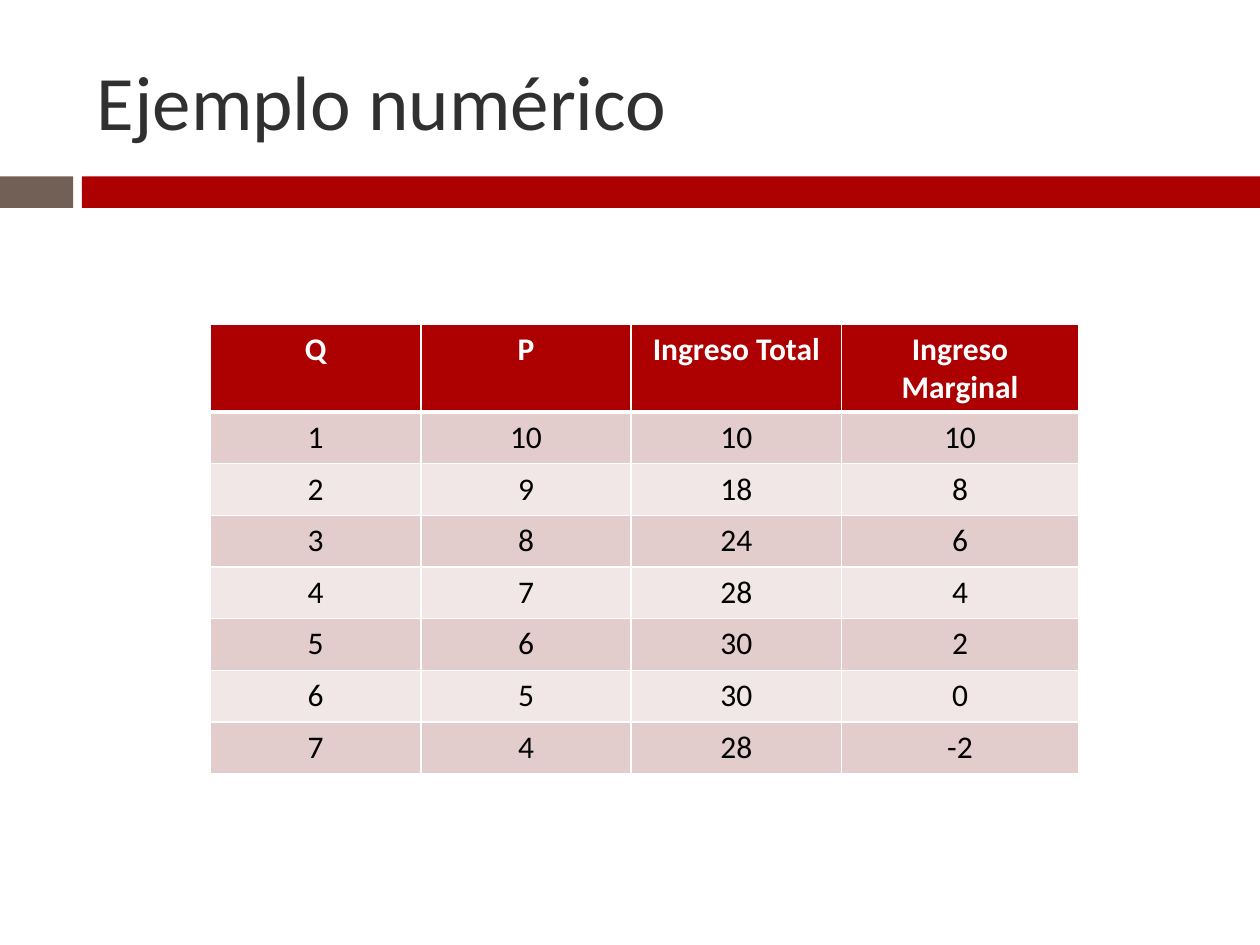
from dataclasses import dataclass

from lxml.etree import SubElement
from pptx import Presentation
from pptx.dml.color import RGBColor
from pptx.enum.shapes import MSO_SHAPE
from pptx.enum.text import MSO_ANCHOR, PP_ALIGN
from pptx.oxml.ns import qn
from pptx.slide import Slide
from pptx.table import _Cell
from pptx.text.text import TextFrame
from pptx.util import Inches, Pt


@dataclass(frozen=True)
class Theme:
    font: str = "Calibri"
    title_size: int = 44
    table_size: int = 18
    title: str = "303030"
    red: str = "AD0101"
    brown: str = "726056"
    white: str = "FFFFFF"
    black: str = "000000"
    bands: tuple[str, str] = ("E3CCCC", "F1E7E7")
    thin: int = 1
    thick: int = 3


@dataclass(frozen=True)
class Bar:
    left: float
    right: float
    color: str


THEME = Theme()
SLIDE_WIDTH, SLIDE_HEIGHT = Inches(10), Inches(7.5)
BAR_TOP, BAR_HEIGHT = Inches(1.4), Inches(0.25)
BARS = [Bar(0, 0.058, THEME.brown), Bar(0.065, 1, THEME.red)]

COLUMN_WIDTHS = [Inches(width) for width in (1.67, 1.67, 1.67, 1.88)]
HEADER_HEIGHT, ROW_HEIGHT = Inches(0.7), Inches(0.41)
HEADERS = ("Q", "P", "Ingreso Total", "Ingreso Marginal")
REVENUES = [
    (1, 10, 10, 10),
    (2, 9, 18, 8),
    (3, 8, 24, 6),
    (4, 7, 28, 4),
    (5, 6, 30, 2),
    (6, 5, 30, 0),
    (7, 4, 28, -2),
]


def write_text(frame: TextFrame, text: str, size: int, color: str,
               bold: bool = False, align: PP_ALIGN = PP_ALIGN.LEFT) -> None:
    frame.text = text
    paragraph = frame.paragraphs[0]
    paragraph.alignment = align
    for run in paragraph.runs:
        run.font.name = THEME.font
        run.font.size = Pt(size)
        run.font.bold = bold
        run.font.color.rgb = RGBColor.from_string(color)


def add_bar(slide: Slide, bar: Bar) -> None:
    shape = slide.shapes.add_shape(
        MSO_SHAPE.RECTANGLE, int(SLIDE_WIDTH * bar.left), BAR_TOP,
        int(SLIDE_WIDTH * (bar.right - bar.left)), BAR_HEIGHT)
    shape.shadow.inherit = False
    shape.fill.solid()
    shape.fill.fore_color.rgb = RGBColor.from_string(bar.color)
    shape.line.fill.background()


def add_title(slide: Slide, text: str) -> None:
    box = slide.shapes.add_textbox(Inches(0.67), Inches(0.25), Inches(8.92), Inches(1.08))
    box.text_frame.word_wrap = True
    box.text_frame.vertical_anchor = MSO_ANCHOR.MIDDLE
    write_text(box.text_frame, text, THEME.title_size, THEME.title)


def set_borders(cell: _Cell, top: int, bottom: int) -> None:
    properties = cell._tc.get_or_add_tcPr()
    widths = {"L": THEME.thin, "R": THEME.thin, "T": top, "B": bottom}
    for side, width in widths.items():
        line = SubElement(properties, qn(f"a:ln{side}"), w=str(Pt(width)))
        fill = SubElement(line, qn("a:solidFill"))
        SubElement(fill, qn("a:srgbClr"), val=THEME.white)


def style_cell(cell: _Cell, row: int, text: str) -> None:
    is_header = row == 0
    set_borders(cell, top=THEME.thick if row == 1 else THEME.thin,
                bottom=THEME.thick if is_header else THEME.thin)
    fill_color = THEME.red if is_header else THEME.bands[(row - 1) % 2]
    cell.fill.solid()
    cell.fill.fore_color.rgb = RGBColor.from_string(fill_color)
    write_text(cell.text_frame, text, THEME.table_size,
               THEME.white if is_header else THEME.black, is_header, PP_ALIGN.CENTER)


def add_revenue_table(slide: Slide) -> None:
    rows = [HEADERS, *REVENUES]
    height = HEADER_HEIGHT + ROW_HEIGHT * len(REVENUES)
    table = slide.shapes.add_table(
        len(rows), len(HEADERS), Inches(1.67), Inches(2.57), sum(COLUMN_WIDTHS), height).table
    for column, width in zip(table.columns, COLUMN_WIDTHS):
        column.width = width
    for row, values in enumerate(rows):
        table.rows[row].height = ROW_HEIGHT if row else HEADER_HEIGHT
        for column, value in enumerate(values):
            style_cell(table.cell(row, column), row, str(value))


def main() -> None:
    presentation = Presentation()
    presentation.slide_width, presentation.slide_height = SLIDE_WIDTH, SLIDE_HEIGHT
    slide = presentation.slides.add_slide(presentation.slide_layouts[6])
    for bar in BARS:
        add_bar(slide, bar)
    add_title(slide, "Ejemplo numérico")
    add_revenue_table(slide)
    presentation.save("out.pptx")


if __name__ == "__main__":
    main()
